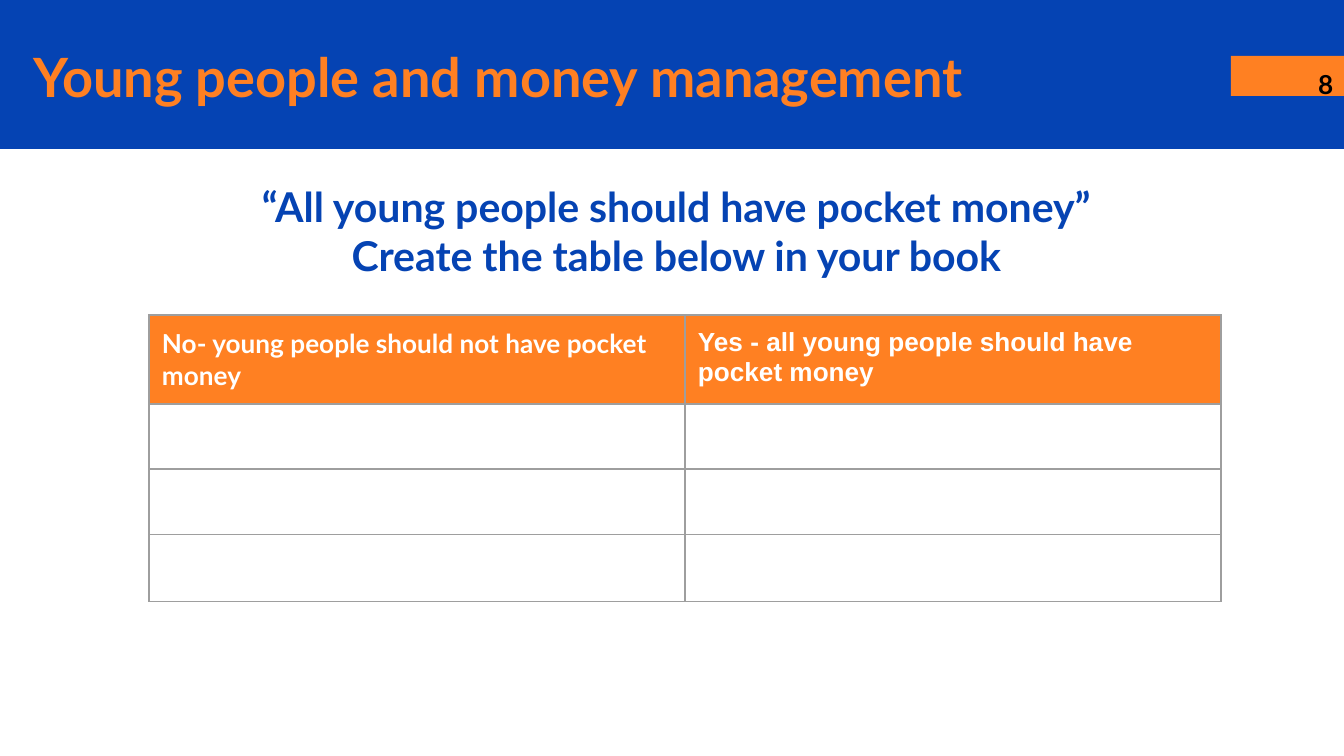
from dataclasses import dataclass

from lxml.etree import SubElement
from pptx import Presentation
from pptx.dml.color import RGBColor as Color
from pptx.enum.shapes import MSO_SHAPE as Shape
from pptx.enum.text import MSO_ANCHOR as Anchor, PP_ALIGN as Align
from pptx.oxml.ns import qn
from pptx.util import Emu, Pt


@dataclass(frozen=True)
class Theme:
    blue: str = "0543B3"
    orange: str = "FF8022"
    white: str = "FFFFFF"
    black: str = "000000"
    grid: str = "9E9E9E"
    font: str = "Lato"
    second_font: str = "Arial"
    title: int = 29
    prompt: int = 22
    body: int = 14
    rule: float = 0.75


THEME = Theme()
SLIDE = (1344, 756)
INSET = 13

TITLE = ["Young people and money management"]
PAGE_NUMBER = ["8"]
PROMPT = [
    "“All young people should have pocket money”",
    "Create the table below in your book",
]
HEADERS = [
    ("No- young people should not have pocket money", THEME.font),
    ("Yes - all young people should have pocket money", THEME.second_font),
]
BANDS = [
    ((0, 0, 1344, 149), THEME.blue),
    ((1231, 56, 113, 40), THEME.orange),
]
TEXTS = [
    (PROMPT, (55, 168, 1243, 126), THEME.prompt, THEME.blue, Align.CENTER, Anchor.TOP),
    (TITLE, (20, 38, 1189, 75), THEME.title, THEME.orange, Align.LEFT, Anchor.MIDDLE),
    (PAGE_NUMBER, (1305, 55, 50, 26), THEME.body, THEME.black, Align.LEFT, Anchor.TOP),
]
TABLE_ORIGIN = (149, 315)
COLUMN_WIDTH = 536
ROW_HEIGHTS = [89, 65, 66, 67]


def px(value):
    return Emu(round(value * 914400 / 134.4))


def place(frame):
    return [px(value) for value in frame]


def set_insets(holder):
    for side in ("left", "top", "right", "bottom"):
        setattr(holder, f"margin_{side}", px(INSET))


def style(para, size, color, face=THEME.font):
    font = para.font
    font.name, font.size, font.bold = face, Pt(size), True
    font.color.rgb = Color.from_string(color)


def add_band(page, frame, color):
    band = page.shapes.add_shape(Shape.RECTANGLE, *place(frame))
    band.shadow.inherit = False
    band.fill.solid()
    band.fill.fore_color.rgb = Color.from_string(color)
    band.line.fill.background()


def add_text(page, lines, frame, size, color, align, anchor):
    body = page.shapes.add_textbox(*place(frame)).text_frame
    body.word_wrap = True
    body.vertical_anchor = anchor
    set_insets(body)
    for index, line in enumerate(lines):
        para = body.add_paragraph() if index else body.paragraphs[0]
        para.text = line
        para.alignment = align
        style(para, size, color)


def add_borders(cell):
    properties = cell._tc.get_or_add_tcPr()
    for edge in ("a:lnL", "a:lnR", "a:lnT", "a:lnB"):
        border = SubElement(properties, qn(edge), w=str(Pt(THEME.rule)))
        fill = SubElement(border, qn("a:solidFill"))
        SubElement(fill, qn("a:srgbClr"), val=THEME.grid)


def add_opinion_table(page):
    size = (COLUMN_WIDTH * len(HEADERS), sum(ROW_HEIGHTS))
    table = page.shapes.add_table(
        len(ROW_HEIGHTS), len(HEADERS), *place(TABLE_ORIGIN + size)
    ).table
    table.horz_banding = False
    for column in table.columns:
        column.width = px(COLUMN_WIDTH)
    for row, height in zip(table.rows, ROW_HEIGHTS):
        row.height = px(height)
    for cell in table.iter_cells():
        set_insets(cell)
        add_borders(cell)
        cell.fill.background()
        cell.text_frame.paragraphs[0].font.size = Pt(THEME.body)
    for cell, (label, face) in zip(table.rows[0].cells, HEADERS):
        cell.fill.solid()
        cell.fill.fore_color.rgb = Color.from_string(THEME.orange)
        para = cell.text_frame.paragraphs[0]
        para.text = label
        style(para, THEME.body, THEME.white, face)


def main():
    deck = Presentation()
    deck.slide_width, deck.slide_height = place(SLIDE)
    page = deck.slides.add_slide(deck.slide_layouts[6])
    for band in BANDS:
        add_band(page, *band)
    add_opinion_table(page)
    for text in TEXTS:
        add_text(page, *text)
    deck.save("out.pptx")


if __name__ == "__main__":
    main()
